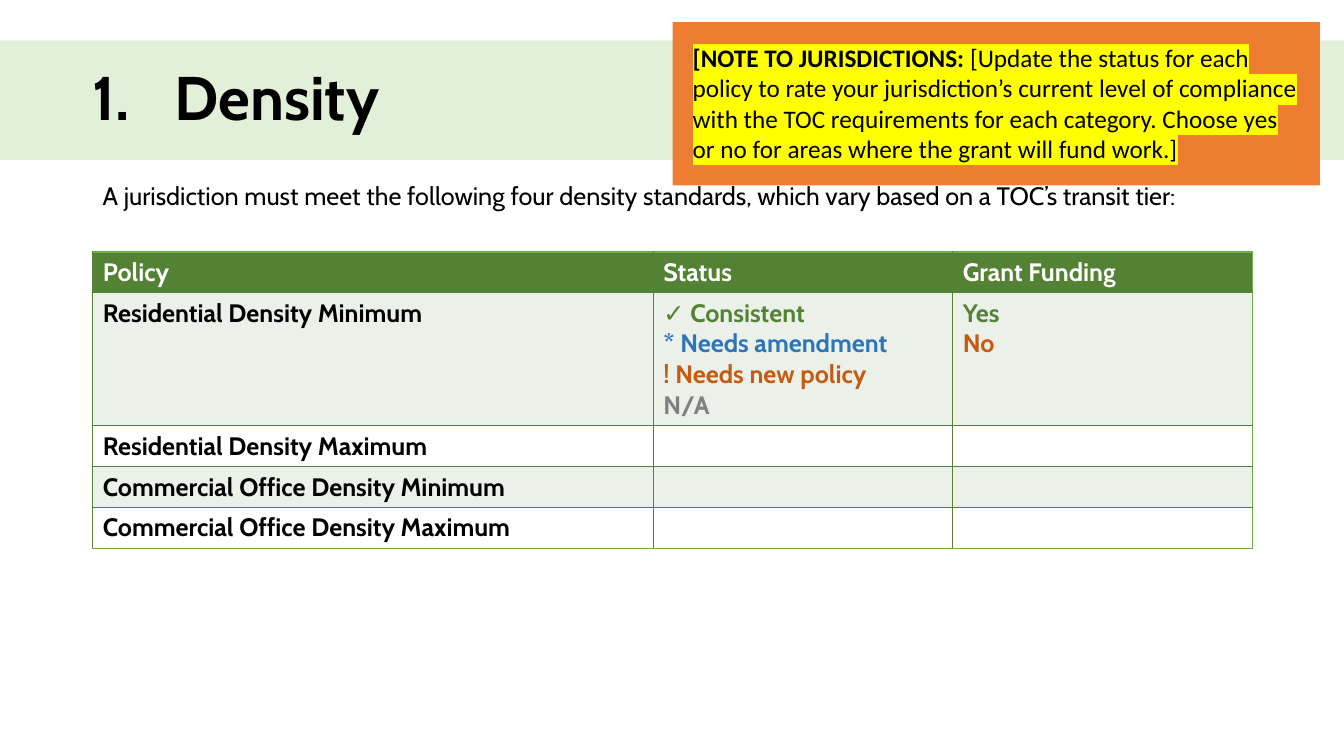
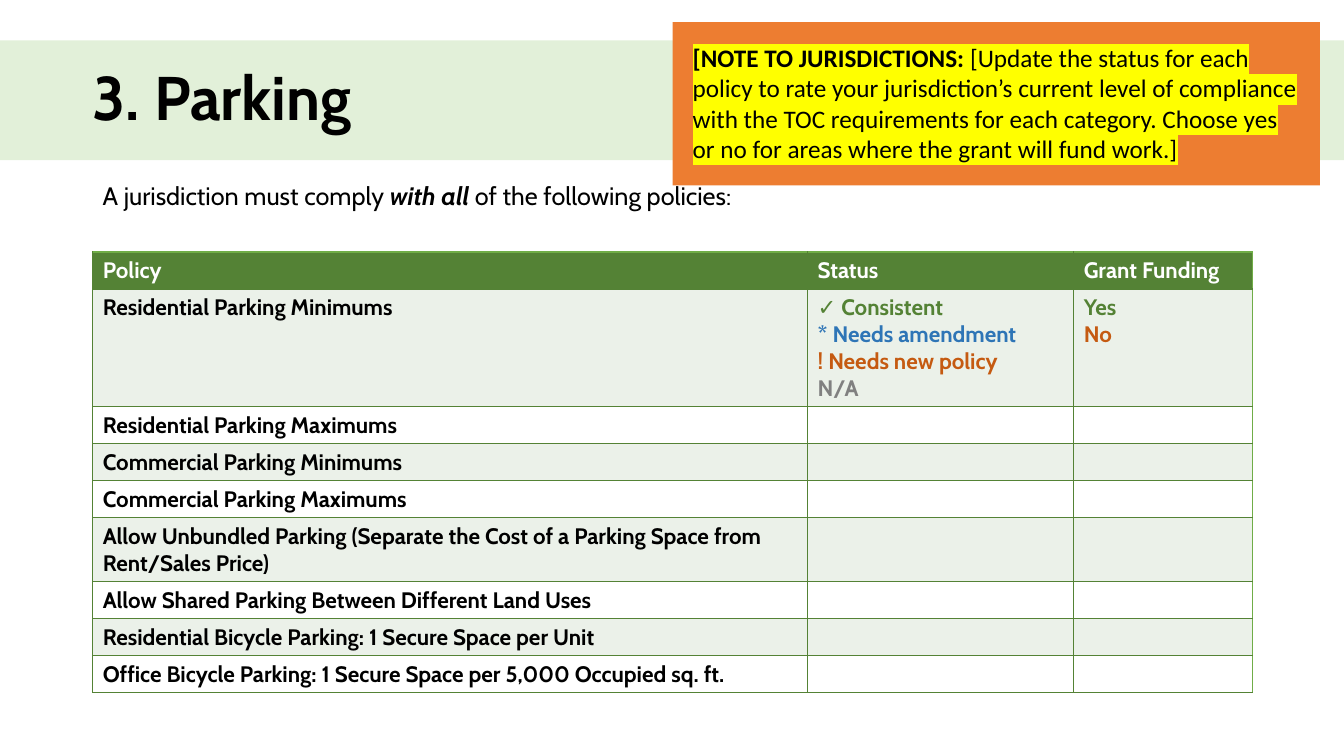
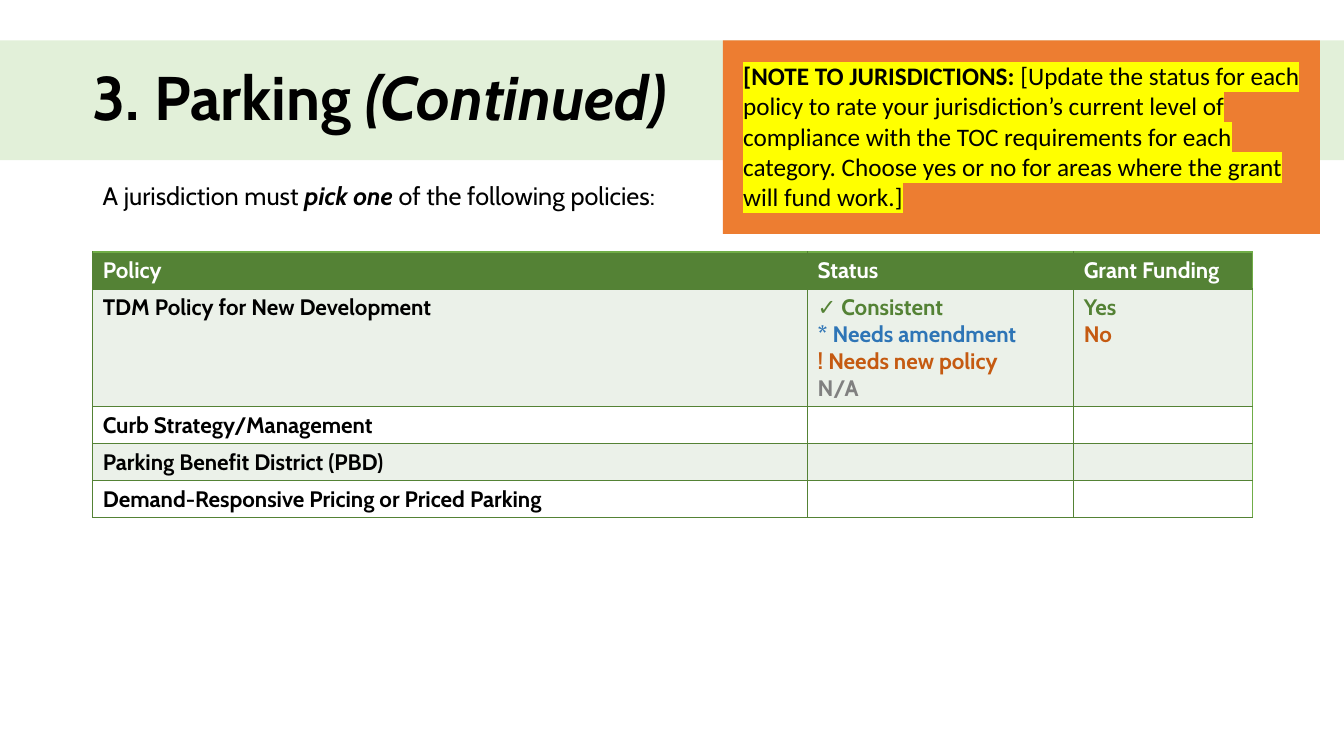
from dataclasses import dataclass

from lxml.etree import SubElement
from pptx import Presentation
from pptx.dml.color import RGBColor
from pptx.enum.shapes import MSO_SHAPE
from pptx.enum.text import MSO_ANCHOR, MSO_AUTO_SIZE, PP_ALIGN
from pptx.oxml.ns import qn
from pptx.util import Inches, Pt


@dataclass(frozen=True)
class Theme:
    font: str = "Cabin"
    note_font: str = "Calibri"
    title_size: int = 44
    body_size: int = 18
    black: str = "000000"
    white: str = "FFFFFF"
    band: str = "E2F0D9"
    stripe: str = "EBF1E9"
    green: str = "548235"
    edge: str = "70AD47"
    blue: str = "2E75B6"
    rust: str = "C55A11"
    gray: str = "808080"
    orange: str = "ED7D31"
    yellow: str = "FFFF00"


THEME = Theme()
WIDTH, HEIGHT = 13.33, 7.5
MARGIN = 0.92
CONTENT_WIDTH = 11.5
BAND_TOP, BAND_HEIGHT = 0.4, 1.19
INTRO_TOP, TABLE_TOP = 1.74, 2.5
INSET = 0.1
NOTE_INSET = 0.2
NOTE_RIGHT = 13.09
NUMBER_INDENT = 0.81

HEADERS = ["Policy", "Status", "Grant Funding"]
STATUSES = [
    ("✓ Consistent", THEME.green),
    ("* Needs amendment", THEME.blue),
    ("! Needs new policy", THEME.rust),
    ("N/A", THEME.gray),
]
FUNDING = [("Yes", THEME.green), ("No", THEME.rust)]
STRONG = {"bold": True, "italic": True}
NOTE = [
    ("[NOTE TO JURISDICTIONS:", {"bold": True}),
    (
        " [Update the status for each policy to rate your jurisdiction’s current level of "
        "compliance with the TOC requirements for each category. Choose yes or no for areas "
        "where the grant will fund work.]",
        {},
    ),
]

WIDE_NOTE = {"left": 6.67, "top": 0.22, "height": 1.62}
TALL_NOTE = {"left": 7.17, "top": 0.4, "height": 1.92}
DENSITY_GRID = {"size": 18, "line": 0.305, "columns": [5.56, 2.97, 2.97], "bottom": THEME.edge}
PARKING_GRID = {"size": 16, "line": 0.267, "columns": [7.09, 2.64, 1.77], "bottom": THEME.green}

SLIDES = [
    {
        "title": [("Density", {})],
        "numbered": True,
        "intro": [
            (
                "A jurisdiction must meet the following four density standards, "
                "which vary based on a TOC’s transit tier:",
                {},
            )
        ],
        "policies": [
            "Residential Density Minimum",
            "Residential Density Maximum",
            "Commercial Office Density Minimum",
            "Commercial Office Density Maximum",
        ],
        "grid": DENSITY_GRID,
        "note": WIDE_NOTE,
    },
    {
        "title": [("3. Parking", {})],
        "numbered": False,
        "intro": [
            ("A jurisdiction must comply ", {}),
            ("with all", STRONG),
            (" of the following policies:", {}),
        ],
        "policies": [
            "Residential Parking Minimums",
            "Residential Parking Maximums",
            "Commercial Parking Minimums",
            "Commercial Parking Maximums",
            "Allow Unbundled Parking (Separate the Cost of a Parking Space from Rent/Sales Price)",
            "Allow Shared Parking Between Different Land Uses",
            "Residential Bicycle Parking: 1 Secure Space per Unit",
            "Office Bicycle Parking: 1 Secure Space per 5,000 Occupied sq. ft.",
        ],
        "grid": PARKING_GRID,
        "note": WIDE_NOTE,
    },
    {
        "title": [("3. Parking ", {}), ("(Continued)", {"italic": True})],
        "numbered": False,
        "intro": [
            ("A jurisdiction must ", {}),
            ("pick one", STRONG),
            (" of the following policies:", {}),
        ],
        "policies": [
            "TDM Policy for New Development",
            "Curb Strategy/Management",
            "Parking Benefit District (PBD)",
            "Demand-Responsive Pricing or Priced Parking",
        ],
        "grid": PARKING_GRID,
        "note": TALL_NOTE,
    },
]


def paint(target, color):
    target.fill.solid()
    target.fill.fore_color.rgb = RGBColor.from_string(color)


def add_color(parent, tag, color):
    SubElement(SubElement(parent, qn(tag)), qn("a:srgbClr"), val=color)


def write(para, text, size=THEME.body_size, color=THEME.black, font=THEME.font,
          bold=False, italic=False, highlight=None):
    span = para.add_run()
    span.text = text
    span.font.size = Pt(size)
    span.font.bold = bold
    span.font.italic = italic
    span.font.color.rgb = RGBColor.from_string(color)
    if highlight:
        add_color(span.font._element, "a:highlight", highlight)
    span.font.name = font


def write_spans(para, spans, **base):
    for text, changes in spans:
        write(para, text, **{**base, **changes})


def place(shape, left, top, width, height):
    shape.left, shape.top = Inches(left), Inches(top)
    shape.width, shape.height = Inches(width), Inches(height)


def format_title(title, spans, numbered):
    place(title, 0, BAND_TOP, WIDTH, BAND_HEIGHT)
    paint(title, THEME.band)
    frame = title.text_frame
    frame.auto_size = MSO_AUTO_SIZE.NONE
    frame.vertical_anchor = MSO_ANCHOR.MIDDLE
    para = frame.paragraphs[0]
    para.alignment = PP_ALIGN.LEFT
    para.line_spacing = 0.9
    hanging = NUMBER_INDENT if numbered else 0
    properties = para._p.get_or_add_pPr()
    properties.set("marL", str(Inches(MARGIN - INSET + hanging)))
    properties.set("indent", str(-Inches(hanging)))
    if numbered:
        SubElement(properties, qn("a:buFont"), typeface=THEME.font)
        SubElement(properties, qn("a:buAutoNum"), type="arabicPeriod")
    write_spans(para, spans, size=THEME.title_size, bold=True)


def add_intro(page, spans):
    box = page.shapes.add_textbox(
        Inches(MARGIN), Inches(INTRO_TOP), Inches(CONTENT_WIDTH), Inches(0.4))
    box.text_frame.word_wrap = True
    box.text_frame.auto_size = MSO_AUTO_SIZE.SHAPE_TO_FIT_TEXT
    write_spans(box.text_frame.paragraphs[0], spans)


def add_note(page, left, top, height):
    box = page.shapes.add_shape(
        MSO_SHAPE.RECTANGLE, Inches(left), Inches(top), Inches(NOTE_RIGHT - left), Inches(height))
    box.shadow.inherit = False
    paint(box, THEME.orange)
    box.line.fill.background()
    frame = box.text_frame
    frame.word_wrap = True
    frame.auto_size = MSO_AUTO_SIZE.SHAPE_TO_FIT_TEXT
    frame.vertical_anchor = MSO_ANCHOR.TOP
    frame.margin_left = frame.margin_right = Inches(NOTE_INSET)
    frame.margin_top = frame.margin_bottom = Inches(NOTE_INSET)
    frame.paragraphs[0].alignment = PP_ALIGN.LEFT
    write_spans(frame.paragraphs[0], NOTE, font=THEME.note_font, highlight=THEME.yellow)


def set_borders(cell, **colors):
    properties = cell._tc.get_or_add_tcPr()
    for side in ("L", "R", "T", "B"):
        line = SubElement(properties, qn(f"a:ln{side}"), w=str(Pt(1)))
        add_color(line, "a:solidFill", colors.get(side, THEME.green))


def fill_cell(cell, entries, size):
    frame = cell.text_frame
    if not entries:
        frame.paragraphs[0]._p.get_or_add_endParaRPr().set("sz", str(size * 100))
    for index, (text, color) in enumerate(entries):
        para = frame.add_paragraph() if index else frame.paragraphs[0]
        write(para, text, size=size, color=color, bold=True)


def add_policy_table(page, policies, size, line, columns, bottom):
    rows = [[[(header, THEME.white)] for header in HEADERS]]
    for index, policy in enumerate(policies):
        choices = [STATUSES, FUNDING] if index == 0 else [[], []]
        rows.append([[(policy, THEME.black)], *choices])
    heights = [max(map(len, row)) * line + INSET for row in rows]
    table = page.shapes.add_table(
        len(rows), len(columns), Inches(MARGIN), Inches(TABLE_TOP),
        Inches(CONTENT_WIDTH), Inches(sum(heights))).table
    for column, width in zip(table.columns, columns):
        column.width = Inches(width)
    for y, row in enumerate(rows):
        table.rows[y].height = Inches(heights[y])
        background = THEME.green if y == 0 else THEME.stripe if y % 2 else THEME.white
        for x, entries in enumerate(row):
            cell = table.cell(y, x)
            edges = {}
            if y == 0:
                edges["T"] = THEME.edge
            if y == len(rows) - 1:
                edges["B"] = bottom
            if x == len(columns) - 1:
                edges["R"] = THEME.edge
            set_borders(cell, **edges)
            paint(cell, background)
            fill_cell(cell, entries, size)


def main():
    deck = Presentation()
    deck.slide_width, deck.slide_height = Inches(WIDTH), Inches(HEIGHT)
    title_only = deck.slide_layouts[5]
    for content in SLIDES:
        page = deck.slides.add_slide(title_only)
        format_title(page.shapes.title, content["title"], content["numbered"])
        add_intro(page, content["intro"])
        add_policy_table(page, content["policies"], **content["grid"])
        add_note(page, **content["note"])
    deck.save("out.pptx")


if __name__ == "__main__":
    main()
